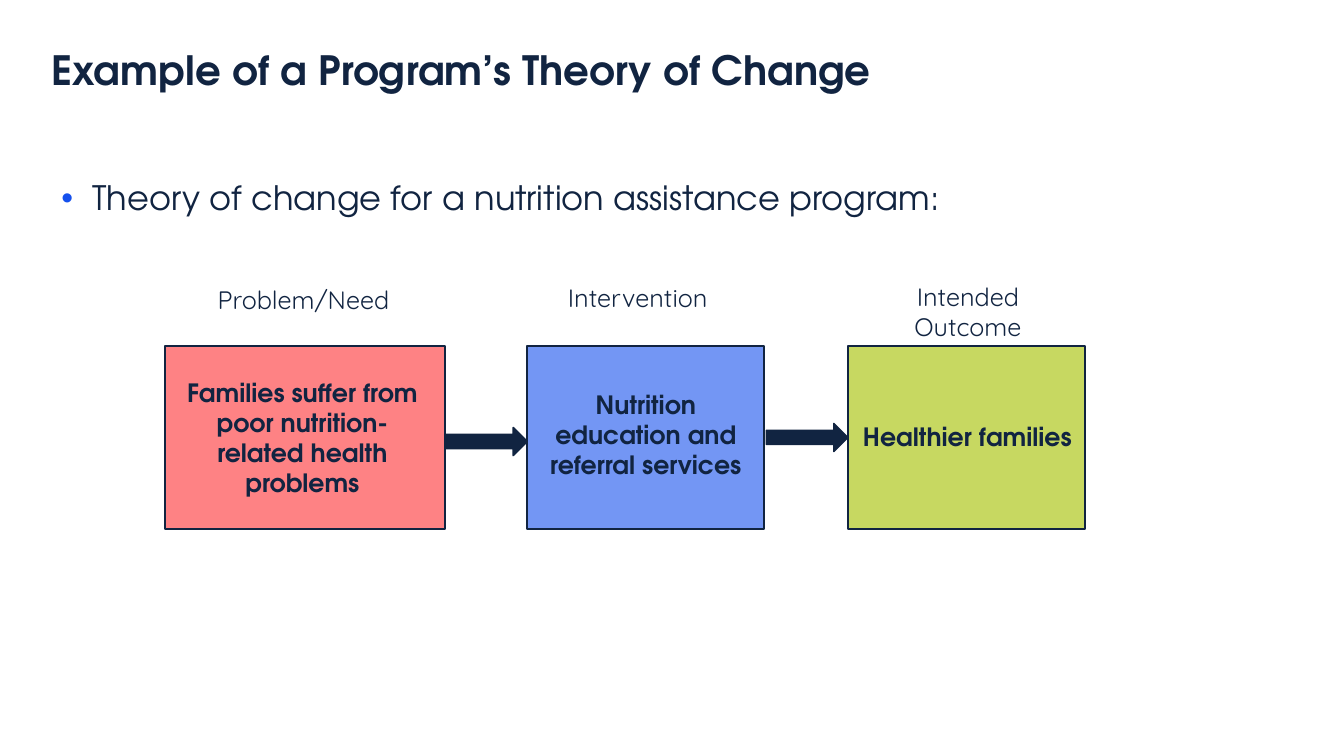
from lxml import etree
from pptx import Presentation
from pptx import util as u
from pptx.dml.color import RGBColor
from pptx.enum import shapes, text
from pptx.oxml.ns import qn

PX = 9144  # EMU per px, 100 px to the inch
COLORS = {"navy": "112441", "bullet": "1550ED", "problem": "FE8284",
          "intervention": "7396F4", "outcome": "C7D861"}
HEADING_FONT, LABEL_FONT = "TeX Gyre Adventor", "Quicksand"

deck = Presentation()
deck.slide_width, deck.slide_height = 1333 * PX, 750 * PX
slide = deck.slides.add_slide(deck.slide_layouts[5])


def write(holder, words, size=18, font=HEADING_FONT, bold=False, align="CENTER",
          spacing=None, anchor="TOP", margins=(10, 5), bullet=None):
    """Fill a text holder with one formatted paragraph; margins are (side, top and bottom) px."""
    frame = holder.text_frame
    frame.word_wrap = True
    frame.auto_size = text.MSO_AUTO_SIZE.NONE
    frame.vertical_anchor = text.MSO_ANCHOR[anchor]
    frame.margin_left = frame.margin_right = margins[0] * PX
    frame.margin_top = frame.margin_bottom = margins[1] * PX
    paragraph = frame.paragraphs[0]
    paragraph.alignment = text.PP_ALIGN[align]
    paragraph.line_spacing = spacing
    if bullet:
        props = paragraph._p.get_or_add_pPr()
        props.set("marL", str(31 * PX))
        props.set("indent", str(-31 * PX))
        tint = etree.SubElement(props, qn("a:buClr"))
        etree.SubElement(tint, qn("a:srgbClr"), val=COLORS[bullet])
        etree.SubElement(props, qn("a:buFont"), typeface="Arial")
        etree.SubElement(props, qn("a:buChar"), char="•")
    run = paragraph.add_run()
    run.text = words
    run.font.name, run.font.size, run.font.bold = font, u.Pt(size), bold
    run.font.color.rgb = RGBColor.from_string(COLORS["navy"])


def add_block(preset, place, fill, line_width):
    block = slide.shapes.add_shape(preset, *(n * PX for n in place))
    block.shadow.inherit = False
    block.fill.solid()
    block.fill.fore_color.rgb = RGBColor.from_string(COLORS[fill])
    block.line.color.rgb = RGBColor.from_string(COLORS["navy"])
    block.line.width = u.Pt(line_width)


title = slide.shapes.title
title.left, title.top, title.width, title.height = (n * PX for n in (51, 48, 997, 46))
write(title, "Example of a Program’s Theory of Change", size=28.8, bold=True,
      align="LEFT", spacing=0.9, anchor="BOTTOM", margins=(0, 0))

intro = slide.shapes.add_textbox(*(n * PX for n in (51, 175, 1058, 350)))
write(intro, "Theory of change for a nutrition assistance program:", size=24,
      align="LEFT", spacing=0.9, bullet="bullet")

# fill, box left and width, label and its place, statement and its place
stages = [
    ("problem", 164, 277, "Problem/Need", (190, 277, 222, 40),
     "Families suffer from poor nutrition-related health problems", (175, 369, 250, 131)),
    ("intervention", 523, 235, "Intervention", (508, 275, 249, 40),
     "Nutrition education and referral services", (523, 381, 235, 101)),
    ("outcome", 841, 235, "Intended Outcome", (849, 274, 222, 71),
     "Healthier families", (843, 413, 233, 40)),
]
for fill, left, width, label, label_place, statement, statement_place in stages:
    add_block(shapes.MSO_SHAPE.RECTANGLE, (left, 343, width, 182), fill, 1.5)
    label_box = slide.shapes.add_textbox(*(n * PX for n in label_place))
    write(label_box, label, font=LABEL_FONT)
    statement_box = slide.shapes.add_textbox(*(n * PX for n in statement_place))
    write(statement_box, statement, bold=True)

for arrow_left, arrow_top in [(442, 424), (760, 420)]:
    add_block(shapes.MSO_SHAPE.RIGHT_ARROW, (arrow_left, arrow_top, 81, 28), "navy", 1)

deck.save("out.pptx")
